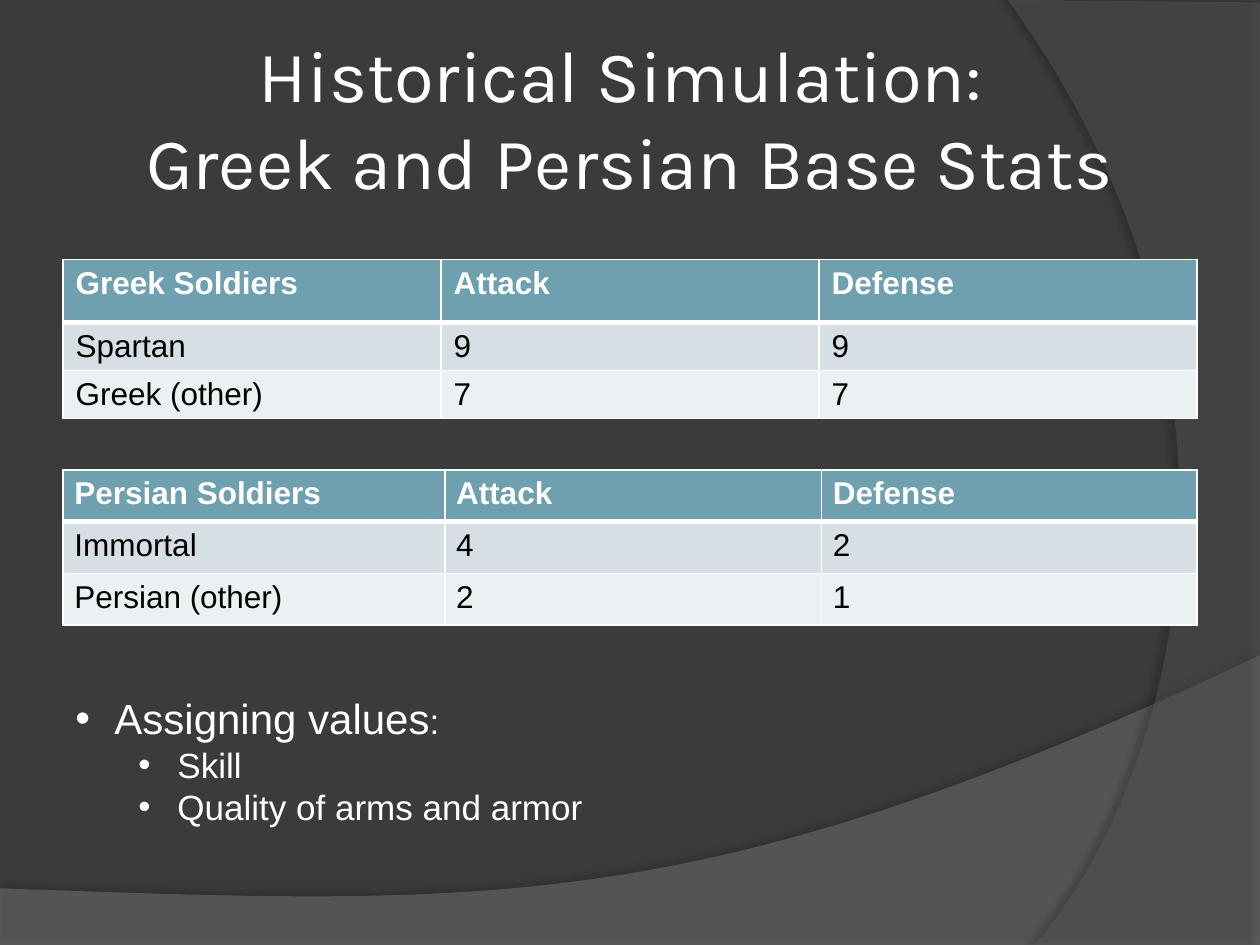
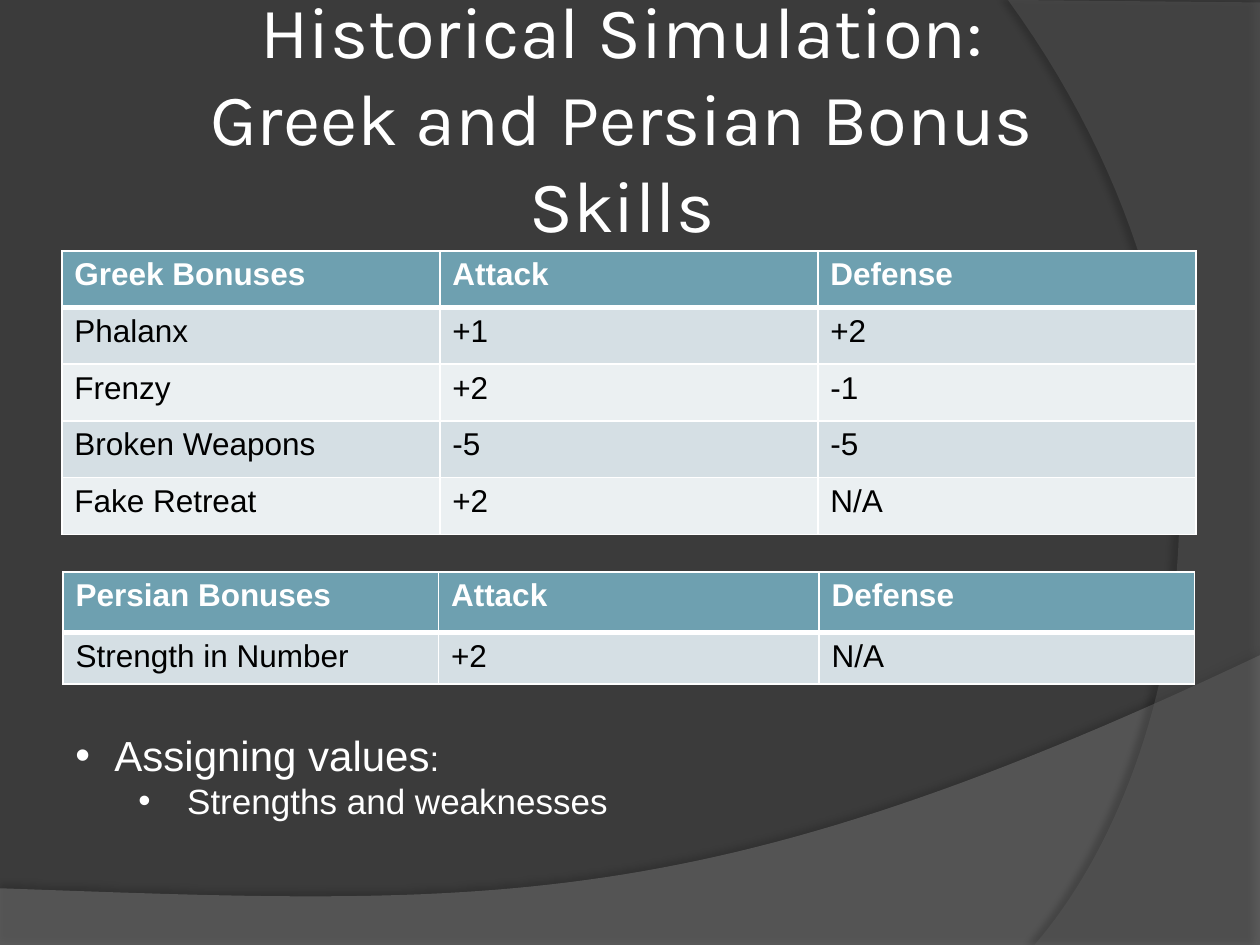
"""Build two slides of soldier statistics for a historical simulation."""
from dataclasses import dataclass

from lxml import etree
from pptx import Presentation
from pptx.dml.color import RGBColor
from pptx.enum import text as t
from pptx.oxml import ns
from pptx.util import Inches, Pt

WHITE = RGBColor(0xFF, 0xFF, 0xFF)
BLACK = RGBColor(0x00, 0x00, 0x00)
BACKGROUND = RGBColor(0x3B, 0x3B, 0x3B)
WAVE_GRAY = RGBColor(0x7F, 0x7F, 0x7F)
ARC_GRAY = RGBColor(0x5E, 0x5E, 0x5E)
HEADER_FILL = RGBColor(0x6E, 0xA0, 0xB0)
ROW_FILLS = (RGBColor(0xD5, 0xDF, 0xE4), RGBColor(0xEB, 0xF0, 0xF2))
TITLE_FONT = "Karla"
BODY_FONT = "Arial"
HANGING = 0.31

Point = tuple[float, float]


@dataclass
class Band:
    """A translucent curved shape with a soft shadow."""
    before: list[Point]
    curve: tuple[Point, Point, Point, Point]
    color: RGBColor
    opacity: int
    shadow_opacity: int
    shadow_distance: float
    shadow_angle: int


@dataclass
class StatTable:
    """A table of names with attack and defense values."""
    left: float
    top: float
    columns: tuple[float, ...]
    heights: list[float]
    rows: list[tuple[str, str, str]]
    side_margin: float = 0.1


@dataclass
class StatSlide:
    """A title, its tables and the bullets on how values are assigned."""
    title: str
    title_left: float
    tables: list[StatTable]
    bullets_top: float
    bullets_width: float
    bullets_height: float
    reasons: list[str]


BANDS = [
    Band([(0, 7.51), (10, 7.51)], ((10, 5.2), (5.59, 7.29), (3.91, 7.19), (0, 7.05)),
         WAVE_GRAY, 45, 35, 3.5, 270),
    Band([(10, 0.02), (10, 7.5)], ((8.21, 7.5), (9.35, 6.19), (10.18, 3), (8, 0)),
         ARC_GRAY, 40, 45, 4, 180),
]

SLIDES = [
    StatSlide(
        "Historical Simulation: \nGreek and Persian Base Stats", 0.91,
        [
            StatTable(0.5, 2.06, (3, 3, 3), [0.5, 0.38, 0.38], [
                ("Greek Soldiers", "Attack", "Defense"),
                ("Spartan", "9", "9"),
                ("Greek (other)", "7", "7"),
            ]),
            StatTable(0.5, 3.73, (3.03, 2.99, 2.98), [0.41] * 3, [
                ("Persian Soldiers", "Attack", "Defense"),
                ("Immortal", "4", "2"),
                ("Persian (other)", "2", "1"),
            ], side_margin=0.09),
        ],
        5.45, 8.58, 1.18, ["Skill", "Quality of arms and armor"]),
    StatSlide(
        "Historical Simulation:\nGreek and Persian Bonus Skills", 0.85,
        [
            StatTable(0.5, 4.54, (2.98, 3.02, 2.98), [0.48, 0.41], [
                ("Persian Bonuses", "Attack", "Defense"),
                ("Strength in Number", "+2", "N/A"),
            ]),
            StatTable(0.49, 1.99, (3, 3, 3), [0.45] * 5, [
                ("Greek Bonuses", "Attack", "Defense"),
                ("Phalanx", "+1", "+2"),
                ("Frenzy", "+2", "-1"),
                ("Broken Weapons", "-5", "-5"),
                ("Fake Retreat", "+2", "N/A"),
            ]),
        ],
        5.74, 8.52, 0.84, [" Strengths and weaknesses"]),
]


def add_xml(parent, tag: str, **attributes):
    """Append a drawing element with the given attributes."""
    element = etree.SubElement(parent, ns.qn(tag))
    for name, value in attributes.items():
        element.set(name, str(value))
    return element


def write(paragraph, content: str, *, size: float, font: str = BODY_FONT,
          color: RGBColor = WHITE, bold: bool = False) -> None:
    """Add formatted text, turning newlines into line breaks."""
    for index, line in enumerate(content.split("\n")):
        if index:
            paragraph.add_line_break()
        run = paragraph.add_run()
        run.text = line
        run.font.size = Pt(size)
        run.font.name = font
        run.font.color.rgb = color
        run.font.bold = bold


def curve_points(curve: tuple[Point, Point, Point, Point], steps: int = 60) -> list[Point]:
    """Sample a cubic curve at equal parameter steps."""
    points = []
    for step in range(steps + 1):
        s = step / steps
        weights = ((1 - s) ** 3, 3 * s * (1 - s) ** 2, 3 * s * s * (1 - s), s ** 3)
        points.append(tuple(sum(w * p[axis] for w, p in zip(weights, curve))
                            for axis in (0, 1)))
    return points


def add_band(slide, band: Band):
    """Draw a band and return its shape."""
    points = [(Inches(x), Inches(y)) for x, y in band.before + curve_points(band.curve)]
    builder = slide.shapes.build_freeform(*points[0])
    builder.add_line_segments(points[1:], close=True)
    shape = builder.convert_to_shape()
    shape.fill.solid()
    shape.fill.fore_color.rgb = band.color
    shape.line.fill.background()
    shape.shadow.inherit = False
    properties = shape.element.spPr
    color = properties.find(f"{ns.qn('a:solidFill')}/{ns.qn('a:srgbClr')}")
    add_xml(color, "a:alpha", val=band.opacity * 1000)
    shadow = add_xml(properties.find(ns.qn("a:effectLst")), "a:outerShdw",
                     blurRad=Pt(4), dist=Pt(band.shadow_distance),
                     dir=band.shadow_angle * 60000, algn="ctr", rotWithShape=0)
    shadow_color = add_xml(shadow, "a:srgbClr", val=BLACK)
    add_xml(shadow_color, "a:alpha", val=band.shadow_opacity * 1000)
    return shape


def decorate_master(presentation, slide) -> None:
    """Give the master the background and bands that all slides share."""
    master = presentation.slide_master
    master.background.fill.solid()
    master.background.fill.fore_color.rgb = BACKGROUND
    for position, band in enumerate(BANDS, start=2):
        master.element.cSld.spTree.insert(position, add_band(slide, band).element)


def add_title(slide, content: str, left: float) -> None:
    """Place and format the title placeholder."""
    title = slide.shapes.title
    title.left, title.top = Inches(left), Inches(0.3)
    title.width, title.height = Inches(8.17), Inches(1.25)
    frame = title.text_frame
    frame.word_wrap = True
    frame.auto_size = t.MSO_AUTO_SIZE.NONE
    frame.vertical_anchor = t.MSO_ANCHOR.MIDDLE
    frame.margin_left = frame.margin_right = Inches(0.05)
    frame.margin_top = frame.margin_bottom = Inches(0.05)
    frame.paragraphs[0].alignment = t.PP_ALIGN.CENTER
    write(frame.paragraphs[0], content, size=41.4, font=TITLE_FONT)


def format_cell(cell, row: int, margin: float) -> None:
    """Set the margins, white borders and banded fill of a cell."""
    cell.margin_left = cell.margin_right = Inches(margin)
    widths = {"L": 1, "R": 1, "T": 3 if row == 1 else 1, "B": 3 if row == 0 else 1}
    properties = cell._tc.get_or_add_tcPr()
    for side, width in widths.items():
        line = add_xml(properties, f"a:ln{side}", w=Pt(width))
        add_xml(add_xml(line, "a:solidFill"), "a:srgbClr", val=WHITE)
    cell.fill.solid()
    cell.fill.fore_color.rgb = ROW_FILLS[(row - 1) % 2] if row else HEADER_FILL


def add_stat_table(slide, stats: StatTable) -> None:
    """Draw a table with a header row and banded rows."""
    table = slide.shapes.add_table(
        len(stats.rows), len(stats.columns), Inches(stats.left), Inches(stats.top),
        Inches(sum(stats.columns)), Inches(sum(stats.heights))).table
    for column, width in zip(table.columns, stats.columns):
        column.width = Inches(width)
    for row, (values, height) in enumerate(zip(stats.rows, stats.heights)):
        table.rows[row].height = Inches(height)
        for column, value in enumerate(values):
            cell = table.cell(row, column)
            format_cell(cell, row, stats.side_margin)
            write(cell.text_frame.paragraphs[0], value, size=18,
                  color=BLACK if row else WHITE, bold=row == 0)


def set_bullet(paragraph, level: int) -> None:
    """Give a paragraph a round bullet and a hanging indent."""
    paragraph.level = level
    properties = paragraph._p.get_or_add_pPr()
    properties.set("marL", str(Inches(HANGING + 0.5 * level)))
    properties.set("indent", str(-Inches(HANGING)))
    add_xml(properties, "a:buFont", typeface=BODY_FONT)
    add_xml(properties, "a:buChar", char="•")


def add_bullets(slide, content: StatSlide) -> None:
    """List the reasons behind the values."""
    frame = slide.shapes.add_textbox(
        Inches(0.5), Inches(content.bullets_top), Inches(content.bullets_width),
        Inches(content.bullets_height)).text_frame
    frame.word_wrap = True
    frame.auto_size = t.MSO_AUTO_SIZE.SHAPE_TO_FIT_TEXT
    heading = frame.paragraphs[0]
    set_bullet(heading, 0)
    write(heading, "Assigning values", size=24)
    write(heading, ":", size=20)
    for reason in content.reasons:
        paragraph = frame.add_paragraph()
        set_bullet(paragraph, 1)
        write(paragraph, reason, size=20)


def main() -> None:
    """Build and save the presentation."""
    presentation = Presentation()
    presentation.slide_width, presentation.slide_height = Inches(10), Inches(7.5)
    title_only = presentation.slide_layouts.get_by_name("Title Only")
    for index, content in enumerate(SLIDES):
        slide = presentation.slides.add_slide(title_only)
        if index == 0:
            decorate_master(presentation, slide)
        add_title(slide, content.title, content.title_left)
        for stats in content.tables:
            add_stat_table(slide, stats)
        add_bullets(slide, content)
    presentation.save("out.pptx")


if __name__ == "__main__":
    main()
